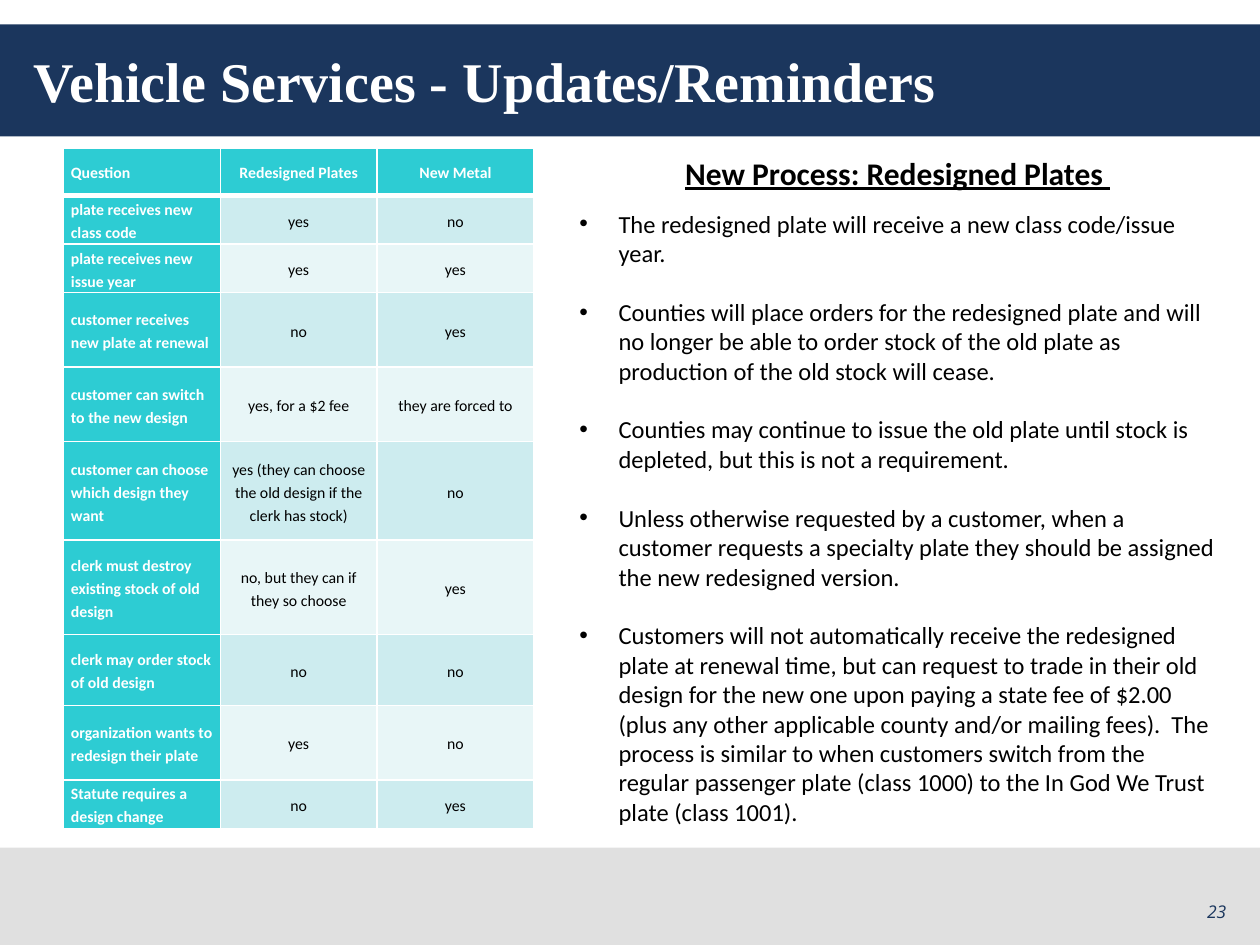
from lxml.etree import SubElement
from pptx import Presentation
from pptx.dml.color import RGBColor
from pptx.enum.shapes import MSO_SHAPE
from pptx.enum.text import MSO_ANCHOR, PP_ALIGN
from pptx.oxml.ns import qn
from pptx.util import Cm, Pt

NAVY, GRAY, TEAL, WHITE, BLACK = "1B365D", "E0E0E0", "2DCCD3", "FFFFFF", "000000"
BANDS = ["CDECEF", "E8F6F7"]
ROWS = [
    ("Question", "Redesigned Plates", "New Metal"),
    ("plate receives new class code", "yes", "no"),
    ("plate receives new issue year", "yes", "yes"),
    ("customer receives new plate at renewal", "no", "yes"),
    ("customer can switch to the new design", "yes, for a $2 fee", "they are forced to"),
    ("customer can choose which design they want",
     "yes (they can choose the old design if the clerk has stock)", "no"),
    ("clerk must destroy existing stock of old design",
     "no, but they can if they so choose", "yes"),
    ("clerk may order stock of old design", "no", "no"),
    ("organization wants to redesign their plate", "yes", "no"),
    ("Statute requires a design change", "no", "yes"),
]
HEIGHTS = [0.96, 0.98, 0.98, 1.5, 1.5, 1.99, 1.9, 1.43, 1.5, 0.98]
BULLETS = [
    "The redesigned plate will receive a new class code/issue year.",
    "Counties will place orders for the redesigned plate and will no longer be able "
    "to order stock of the old plate as production of the old stock will cease.",
    "Counties may continue to issue the old plate until stock is depleted, "
    "but this is not a requirement.",
    "Unless otherwise requested by a customer, when a customer requests a specialty "
    "plate they should be assigned the new redesigned version.",
    "Customers will not automatically receive the redesigned plate at renewal time, "
    "but can request to trade in their old design for the new one upon paying a state "
    "fee of $2.00 (plus any other applicable county and/or mailing fees).  The process "
    "is similar to when customers switch from the regular passenger plate (class 1000) "
    "to the In God We Trust plate (class 1001).",
]


def rgb(color):
    return RGBColor.from_string(color)


def write(p, text, size, color=BLACK, font="Calibri", bold=False, italic=False,
          underline=False, align=PP_ALIGN.LEFT, spacing=None):
    p.alignment = align
    if spacing:
        p.line_spacing = spacing
    r = p.add_run()
    r.text = text
    f = r.font
    f.name, f.size, f.bold, f.italic, f.underline = font, Pt(size), bold, italic, underline
    f.color.rgb = rgb(color)


def add_band(s, top, height, color):
    sp = s.shapes.add_shape(MSO_SHAPE.RECTANGLE, 0, Cm(top), Cm(25.4), Cm(height))
    sp.shadow.inherit = False
    sp.fill.solid()
    sp.fill.fore_color.rgb = rgb(color)
    sp.line.fill.background()


def add_box(s, left, top, width, height, anchor=MSO_ANCHOR.TOP):
    tf = s.shapes.add_textbox(Cm(left), Cm(top), Cm(width), Cm(height)).text_frame
    tf.word_wrap = True
    tf.vertical_anchor = anchor
    return tf


def add_title(s, text):
    sp = s.shapes.title
    sp.element.getparent().append(sp.element)
    sp.left, sp.top, sp.width, sp.height = Cm(0.43), Cm(0.48), Cm(24.56), Cm(2.29)
    tf = sp.text_frame
    tf.vertical_anchor = MSO_ANCHOR.MIDDLE
    write(tf.paragraphs[0], text, 32, WHITE, "Times New Roman", bold=True)


def add_borders(cell, **widths):
    for side in "LRTB":
        ln = SubElement(cell._tc.get_or_add_tcPr(), qn(f"a:ln{side}"),
                        w=str(Pt(widths.get(side, 1))))
        fill = SubElement(ln, qn("a:solidFill"))
        SubElement(fill, qn("a:srgbClr"), val=WHITE)


def fill_cell(cell, text, i, j):
    head = i == 0 or j == 0
    add_borders(cell, T=3 if i == 1 else 1, B=3 if i == 0 else 1)
    cell.fill.solid()
    cell.fill.fore_color.rgb = rgb(TEAL if head else BANDS[(i - 1) % 2])
    cell.vertical_anchor = MSO_ANCHOR.MIDDLE
    cell.margin_left = cell.margin_right = Cm(0.15)
    cell.margin_top = cell.margin_bottom = 0
    write(cell.text_frame.paragraphs[0], text, 9, WHITE if head else BLACK, bold=head,
          align=PP_ALIGN.CENTER if j else PP_ALIGN.LEFT, spacing=1.2)


def add_plate_table(s):
    table = s.shapes.add_table(len(ROWS), 3, Cm(1.28), Cm(2.98), Cm(9.48),
                               Cm(sum(HEIGHTS))).table
    for col in table.columns:
        col.width = Cm(3.16)
    for i, (row, height) in enumerate(zip(ROWS, HEIGHTS)):
        table.rows[i].height = Cm(height)
        for j, text in enumerate(row):
            fill_cell(table.cell(i, j), text, i, j)


def add_bullets(tf, items):
    for i, text in enumerate(items):
        p = tf.add_paragraph() if i else tf.paragraphs[0]
        pPr = p._p.get_or_add_pPr()
        pPr.set("marL", str(Cm(0.79)))
        pPr.set("indent", str(-Cm(0.79)))
        SubElement(pPr, qn("a:buFont"), typeface="Arial")
        SubElement(pPr, qn("a:buChar"), char="•")
        if i:
            p.space_before = Pt(16.8)
        write(p, text, 14)


def main():
    prs = Presentation()
    prs.slide_width, prs.slide_height = Cm(25.4), Cm(19.05)
    s = prs.slides.add_slide(prs.slide_layouts[5])
    add_band(s, 0.49, 2.26, NAVY)
    add_band(s, 17.09, 1.96, GRAY)
    add_title(s, "Vehicle Services - Updates/Reminders")
    add_plate_table(s)
    tf = add_box(s, 11.43, 2.98, 13.34, 1.03)
    write(tf.paragraphs[0], "New Process: Redesigned Plates ", 18, bold=True,
          underline=True, align=PP_ALIGN.CENTER)
    add_bullets(add_box(s, 11.43, 4.08, 13.34, 12.83), BULLETS)
    tf = add_box(s, 19.05, 17.7, 5.92, 1.02, MSO_ANCHOR.BOTTOM)
    write(tf.paragraphs[0], "23", 10, NAVY, "Open Sans", italic=True, align=PP_ALIGN.RIGHT)
    prs.save("out.pptx")


if __name__ == "__main__":
    main()
